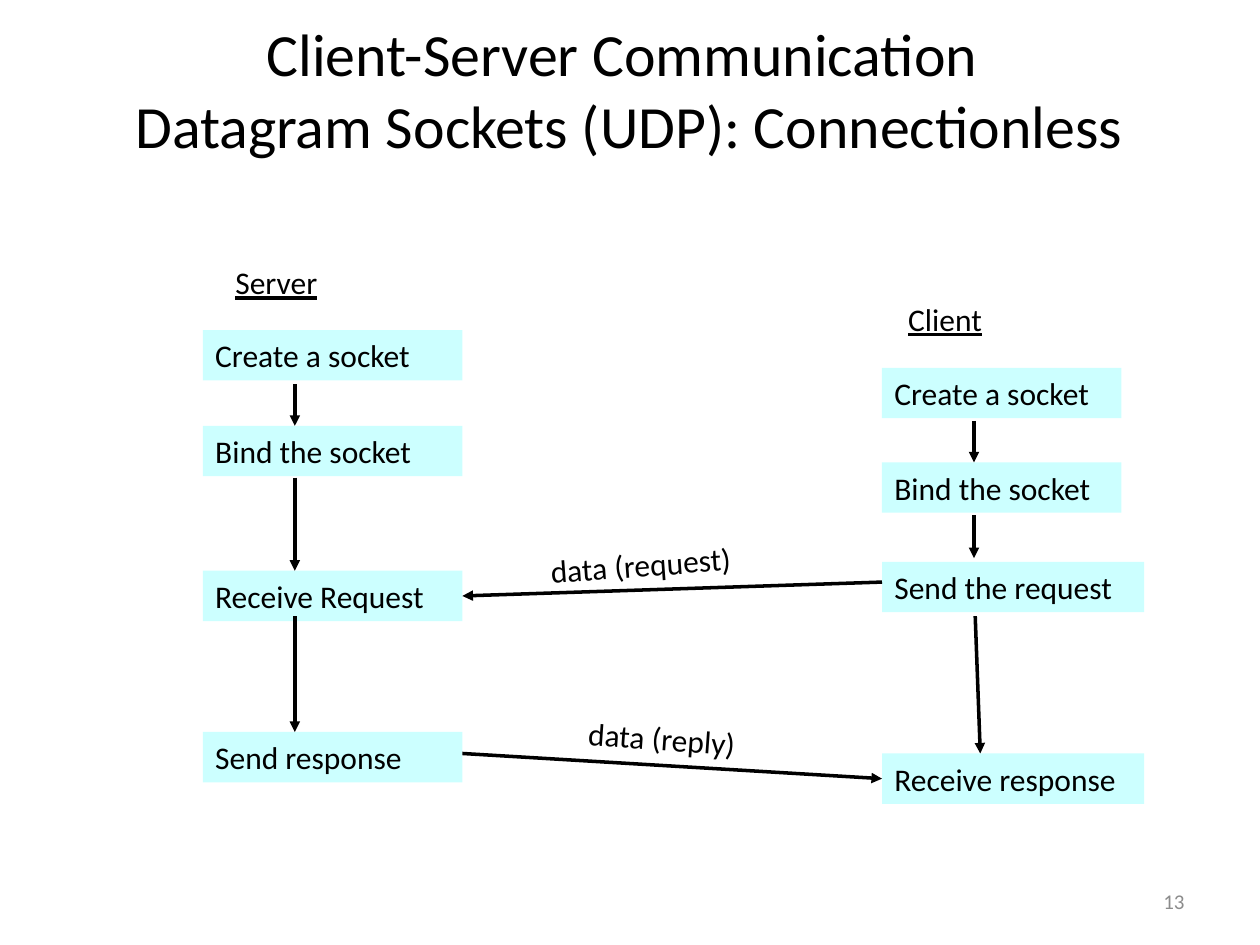
from lxml.etree import SubElement
from pptx import Presentation
from pptx.dml.color import RGBColor
from pptx.enum.shapes import MSO_CONNECTOR, MSO_SHAPE
from pptx.enum.text import MSO_ANCHOR, MSO_AUTO_SIZE, PP_ALIGN
from pptx.oxml.ns import qn
from pptx.util import Inches, Pt

BLACK, GREY, CYAN = "000000", "8C8C8C", "CCFFFF"
BOX_HEIGHT = 0.4
LEFT_SIDE, RIGHT_SIDE = 1, 3
SERVER_LEFT, SERVER_WIDTH, SERVER_ARROW = 1.61, 2.06, 2.34
CLIENT_LEFT, CLIENT_ARROW = 7, 7.73
SERVER_STEPS = [
    ("Create a socket", 2.62, SERVER_WIDTH),
    ("Bind the socket", 3.38, SERVER_WIDTH),
    ("Receive Request", 4.53, SERVER_WIDTH),
    ("Send response", 5.81, SERVER_WIDTH),
]
CLIENT_STEPS = [
    ("Create a socket", 2.92, 1.9),
    ("Bind the socket", 3.67, 1.9),
    ("Send the request", 4.46, 2.08),
    ("Receive response", 5.98, 2.08),
]
DOWN_ARROWS = [
    ((SERVER_ARROW, 3.05), (SERVER_ARROW, 3.38)),
    ((SERVER_ARROW, 3.79), (SERVER_ARROW, 4.53)),
    ((SERVER_ARROW, 4.89), (SERVER_ARROW, 5.81)),
    ((CLIENT_ARROW, 3.34), (CLIENT_ARROW, 3.67)),
    ((CLIENT_ARROW, 4.09), (CLIENT_ARROW, 4.43)),
    ((7.74, 4.89), (7.78, 5.98)),
]
LABELS = [
    ("Server", (1.77, 2.04, 1.2, 0.43), 0, True),
    ("Client", (7.11, 2.33, 1.2, 0.43), 0, True),
    ("data (request)", (4.27, 4.28, 1.66, 0.4), -4.2, False),
    ("data (reply)", (4.57, 5.66, 1.39, 0.4), 4.1, False),
]


def color(value):
    """Turn a hex string into a colour."""
    return RGBColor.from_string(value)


def set_attributes(target, values):
    """Set every named attribute on the target."""
    for name, value in values.items():
        setattr(target, name, value)


def write_text(shape, text, size=18, ink=BLACK, align=PP_ALIGN.LEFT,
               anchor=MSO_ANCHOR.TOP, wrap=True, underline=None):
    """Fill a shape with one formatted paragraph."""
    frame = shape.text_frame
    frame.text = text
    set_attributes(frame, {"word_wrap": wrap, "vertical_anchor": anchor,
                           "auto_size": MSO_AUTO_SIZE.NONE})
    para = frame.paragraphs[0]
    para.alignment = align
    for span in para.runs:
        set_attributes(span.font, {"name": "Calibri", "size": Pt(size),
                                   "underline": underline})
        span.font.color.rgb = color(ink)


def add_title(page, text):
    """Place and fill the title placeholder."""
    title = page.shapes.title
    set_attributes(title, {"left": Inches(0.25), "top": Inches(0.08),
                           "width": Inches(9.48), "height": Inches(1.25)})
    write_text(title, text, size=34.2, align=PP_ALIGN.CENTER,
               anchor=MSO_ANCHOR.MIDDLE)


def add_step(page, text, left, top, width):
    """Add one filled step box."""
    box = page.shapes.add_shape(MSO_SHAPE.RECTANGLE, Inches(left), Inches(top),
                                Inches(width), Inches(BOX_HEIGHT))
    box.shadow.inherit = False
    box.fill.solid()
    box.fill.fore_color.rgb = color(CYAN)
    box.line.fill.background()
    write_text(box, text)
    return box


def add_label(page, text, place, rotation=0, **style):
    """Add a text box, turned if needed."""
    box = page.shapes.add_textbox(*map(Inches, place))
    box.rotation = rotation
    write_text(box, text, **style)


def add_arrow(page, start, end, target=None, side=None):
    """Add an arrow, joined to the side of a target box if one is given."""
    arrow = page.shapes.add_connector(MSO_CONNECTOR.STRAIGHT,
                                      *map(Inches, (*start, *end)))
    if target is not None:
        arrow.end_connect(target, side)
    arrow.line.color.rgb = color(BLACK)
    arrow.line.width = Pt(2)
    SubElement(arrow.line._get_or_add_ln(), qn("a:tailEnd"), type="triangle")
    SubElement(arrow._element.spPr, qn("a:effectLst"))


def main():
    """Build the slide and save it."""
    deck = Presentation()
    set_attributes(deck, {"slide_width": Inches(10), "slide_height": Inches(7.5)})
    page = deck.slides.add_slide(deck.slide_layouts[5])
    add_title(page, "Client-Server Communication \v"
                    "Datagram Sockets (UDP): Connectionless")
    server = [add_step(page, text, SERVER_LEFT, top, width)
              for text, top, width in SERVER_STEPS]
    client = [add_step(page, text, CLIENT_LEFT, top, width)
              for text, top, width in CLIENT_STEPS]
    for start, end in DOWN_ARROWS:
        add_arrow(page, start, end)
    add_arrow(page, (7, 4.62), (3.67, 4.73), server[2], RIGHT_SIDE)
    add_arrow(page, (3.67, 5.98), (7, 6.18), client[3], LEFT_SIDE)
    for text, place, rotation, underline in LABELS:
        add_label(page, text, place, rotation, wrap=False, underline=underline)
    add_label(page, "13", (7.17, 6.95, 2.33, 0.4), size=12, ink=GREY,
              align=PP_ALIGN.RIGHT, anchor=MSO_ANCHOR.MIDDLE)
    deck.save("out.pptx")


if __name__ == "__main__":
    main()
